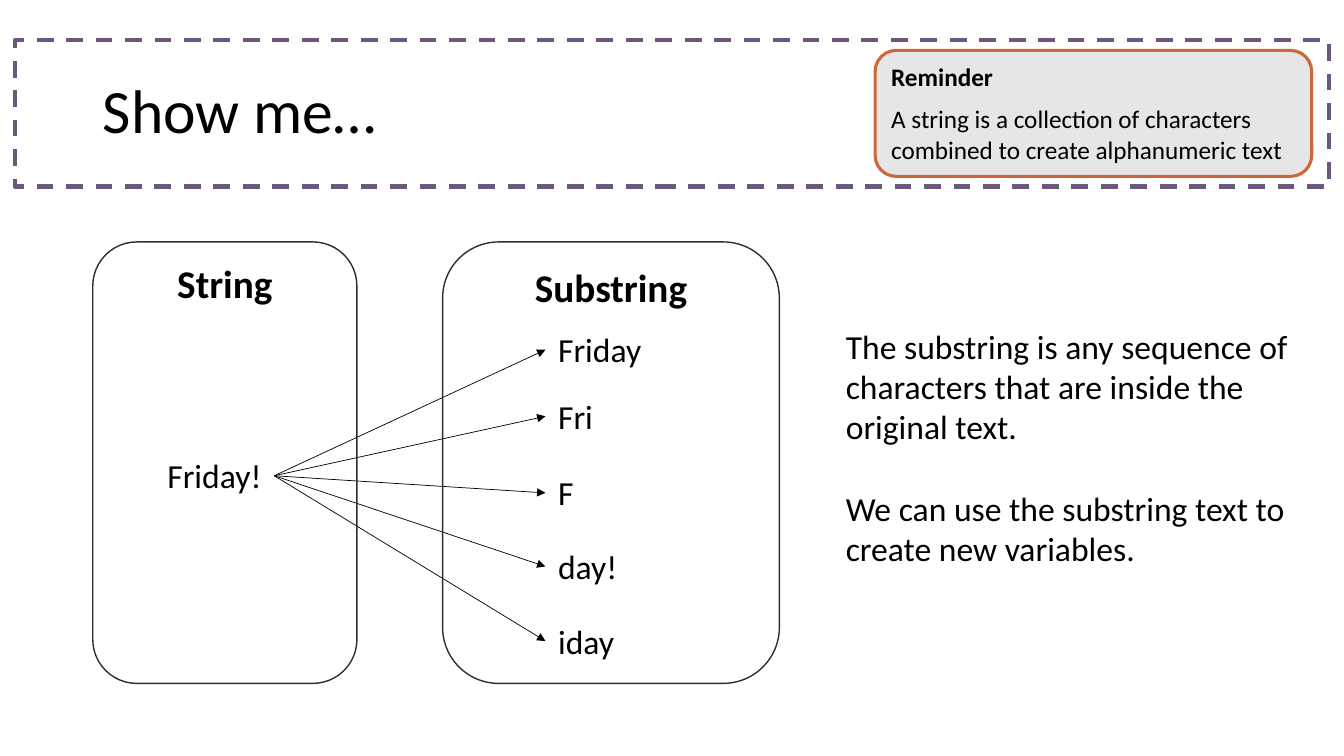
import pptx
import pptx.util
import pptx.dml.color
import pptx.enum.dml
import pptx.enum.shapes
import pptx.enum.text
import lxml.etree
from dataclasses import dataclass
from pptx.util import Inches

ALIGN = pptx.enum.text.PP_ALIGN
ANCHOR = pptx.enum.text.MSO_ANCHOR
SHAPE = pptx.enum.shapes.MSO_SHAPE


@dataclass(frozen=True)
class Theme:
    """Colours, font and type sizes of the slide."""
    font: str = "Calibri"
    text: str = "000000"
    white: str = "FFFFFF"
    frame: str = "6C587C"
    panel_line: str = "292F36"
    reminder_fill: str = "E7E6E6"
    reminder_line: str = "CE673B"
    title_size: int = 44
    heading_size: int = 28
    body_size: int = 24
    reminder_size: int = 18


THEME = Theme()


def colour(value):
    """Turn a hex string into a colour."""
    return pptx.dml.color.RGBColor.from_string(value)


def write(shape, paragraphs, size, align=ALIGN.LEFT, bold=False, gap=0, anchor=ANCHOR.TOP):
    """Write formatted paragraphs, with a gap in points between them."""
    frame = shape.text_frame
    frame.word_wrap = True
    frame.auto_size = pptx.enum.text.MSO_AUTO_SIZE.NONE
    frame.vertical_anchor = anchor
    frame.text = "\n".join(paragraphs)
    for index, paragraph in enumerate(frame.paragraphs):
        paragraph.alignment = align
        paragraph.space_before = pptx.util.Pt(gap if index else 0)
        for run in paragraph.runs:
            run.font.name = THEME.font
            run.font.size = pptx.util.Pt(size)
            run.font.bold = bold
            run.font.color.rgb = colour(THEME.text)


def place(shape, left, top, width, height):
    """Move and size a shape in inches."""
    shape.left, shape.top = Inches(left), Inches(top)
    shape.width, shape.height = Inches(width), Inches(height)


def add_box(slide, box, line, line_width=1, fill=None, kind=SHAPE.ROUNDED_RECTANGLE):
    """Add an outlined box with an optional fill."""
    shape = slide.shapes.add_shape(kind, *map(Inches, box))
    shape.shadow.inherit = False
    if fill:
        shape.fill.solid()
        shape.fill.fore_color.rgb = colour(fill)
    else:
        shape.fill.background()
    shape.line.color.rgb = colour(line)
    shape.line.width = pptx.util.Pt(line_width)
    return shape


def add_word(slide, word, box, align=ALIGN.LEFT, fill=None):
    """Add a word in a white-edged box."""
    shape = add_box(slide, box, THEME.white, fill=fill)
    write(shape, [word], THEME.body_size, align)
    return shape


def add_arrow(slide, source, target):
    """Join the right side of one box to the left side of another."""
    arrow = slide.shapes.add_connector(
        pptx.enum.shapes.MSO_CONNECTOR.STRAIGHT, 0, 0, 0, 0)
    arrow.begin_connect(source, 3)
    arrow.end_connect(target, 1)
    arrow.line.color.rgb = colour(THEME.text)
    arrow.line.width = pptx.util.Pt(0.5)
    tail = lxml.etree.SubElement(arrow.line._get_or_add_ln(), pptx.oxml.ns.qn("a:tailEnd"))
    tail.set("type", "triangle")
    lxml.etree.SubElement(arrow._element.spPr, pptx.oxml.ns.qn("a:effectLst"))


def add_panel(slide, heading, box):
    """Add a tall rounded panel with a heading."""
    panel = add_box(slide, box, THEME.panel_line)
    write(panel, [heading], THEME.heading_size, ALIGN.CENTER, bold=True)


def add_title(slide, text):
    """Add the dashed frame and fill the title placeholder."""
    frame = add_box(slide, (0.15, 0.4, 13.03, 1.45), THEME.frame, 3, kind=SHAPE.RECTANGLE)
    frame.line.dash_style = pptx.enum.dml.MSO_LINE.DASH
    title = slide.shapes.title
    place(title, 0.92, 0.4, 11.5, 1.45)
    write(title, [text], THEME.title_size, anchor=ANCHOR.MIDDLE)
    title.text_frame.paragraphs[0].line_spacing = 0.9


def add_reminder(slide, heading, text):
    """Add the reminder box with a bold heading."""
    reminder = add_box(slide, (8.68, 0.5, 4.33, 1.25), THEME.reminder_line, 2.25,
                       THEME.reminder_fill)
    write(reminder, [heading, text], THEME.reminder_size, gap=8.5)
    reminder.text_frame.paragraphs[0].runs[0].font.bold = True


def add_explanation(slide, paragraphs):
    """Add the explanatory text beside the panels."""
    explanation = slide.shapes.add_textbox(*map(Inches, (8.29, 3.18, 4.65, 2.52)))
    write(explanation, paragraphs, THEME.body_size, gap=29.3)


def main():
    """Build and save the slide."""
    presentation = pptx.Presentation()
    presentation.slide_width = Inches(13.33)
    presentation.slide_height = Inches(7.5)
    slide = presentation.slides.add_slide(presentation.slide_layouts[5])

    add_title(slide, "Show me…")
    string = add_word(slide, "Friday!", (1.38, 4.44, 1.34, 0.56), ALIGN.RIGHT, THEME.white)
    substrings = {"Friday": 3.19, "Fri": 3.85, "F": 4.61, "day!": 5.34, "iday": 6.08}
    for word, top in substrings.items():
        substring = add_word(slide, word, (5.41, top, 2.32, 0.56))
        add_arrow(slide, string, substring)
    add_reminder(slide, "Reminder",
                 "A string is a collection of characters combined to create alphanumeric text")
    add_panel(slide, "String", (0.92, 2.4, 2.62, 4.38))
    add_panel(slide, "Substring", (4.39, 2.4, 3.34, 4.38))
    add_explanation(slide, [
        "The substring is any sequence of characters that are inside the original text.",
        "We can use the substring text to create new variables.",
    ])
    presentation.save("out.pptx")


if __name__ == "__main__":
    main()
